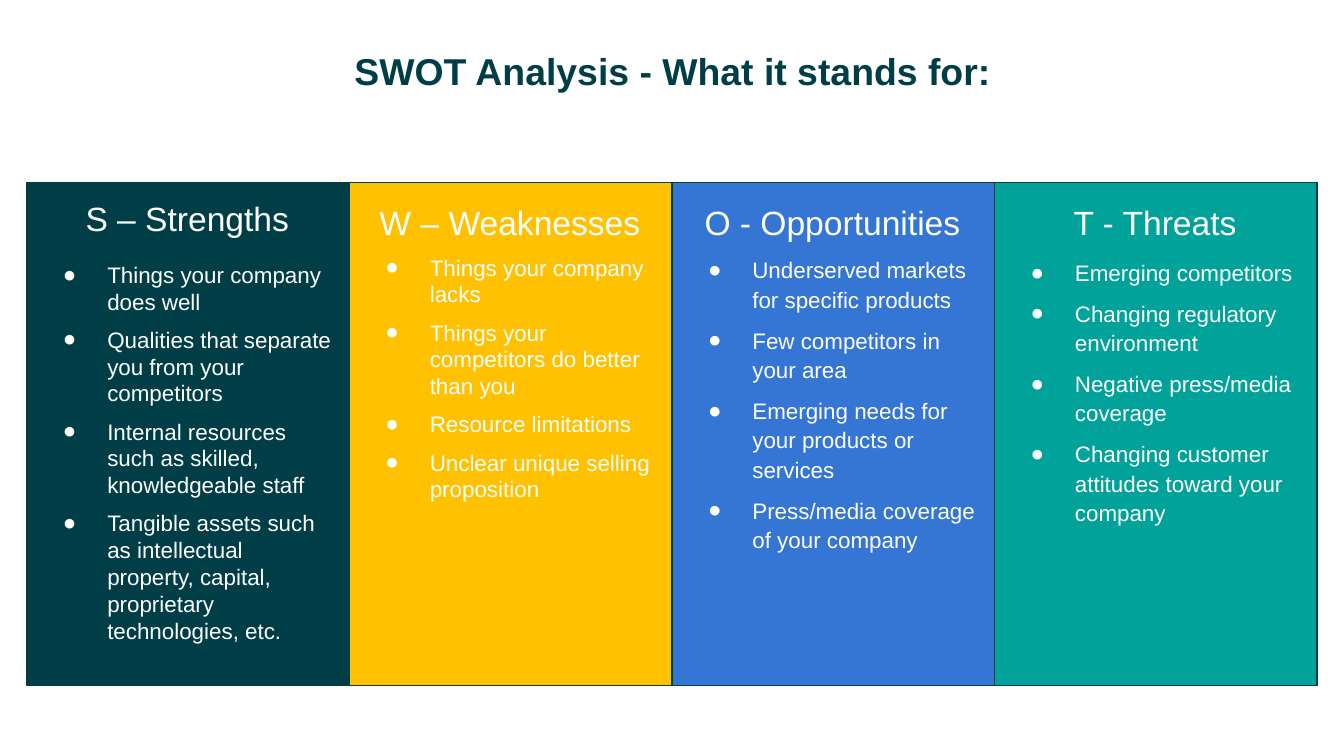
from lxml import etree
from pptx import Presentation
from pptx import util as u
from pptx.dml.color import RGBColor
from pptx.enum import shapes, text
from pptx.oxml import ns

Inches, Pt = u.Inches, u.Pt
DARK, WHITE = "003E47", "FFFFFF"


def color(value):
    return RGBColor.from_string(value)


class Deck:
    font = "Arial"

    def __init__(self, prs):
        self.s = prs.slides.add_slide(prs.slide_layouts[6])

    def run(self, p, words, size, fill, bold=False):
        r = p.add_run()
        r.text = words
        r.font.name, r.font.size, r.font.bold = self.font, Pt(size), bold
        r.font.color.rgb = color(fill)

    def title(self, words, x, y, w, h):
        tf = self.s.shapes.add_textbox(
            Inches(x), Inches(y), Inches(w), Inches(h)).text_frame
        tf.word_wrap = True
        p = tf.paragraphs[0]
        p.alignment = text.PP_ALIGN.CENTER
        self.run(p, words, 20, DARK, bold=True)

    def panel(self, x, y, w, h, fill):
        sp = self.s.shapes.add_shape(
            shapes.MSO_SHAPE.RECTANGLE, Inches(x), Inches(y), Inches(w), Inches(h))
        sp.shadow.inherit = False
        sp.fill.solid()
        sp.fill.fore_color.rgb = color(fill)
        sp.line.color.rgb = color(DARK)
        sp.line.width = Pt(0.75)
        tf = sp.text_frame
        tf.word_wrap = True
        tf.vertical_anchor = text.MSO_ANCHOR.TOP
        tf.margin_left = tf.margin_top = tf.margin_bottom = Inches(0.1)
        tf.margin_right = Inches(0.11)
        return tf

    def heading(self, tf, words, spacing):
        p = tf.paragraphs[0]
        p.alignment = text.PP_ALIGN.CENTER
        p.line_spacing = spacing
        self.run(p, words, 18, WHITE)

    def bullet(self, tf, words, spacing, before):
        p = tf.add_paragraph()
        p.alignment = text.PP_ALIGN.LEFT
        p.line_spacing = spacing
        p.space_before = Pt(before)
        pPr = p._p.get_or_add_pPr()
        pPr.set("marL", str(Inches(0.5)))
        pPr.set("indent", str(Inches(-0.33)))
        clr = etree.SubElement(pPr, ns.qn("a:buClr"))
        etree.SubElement(clr, ns.qn("a:srgbClr"), val=WHITE)
        etree.SubElement(pPr, ns.qn("a:buFont"), typeface=self.font)
        etree.SubElement(pPr, ns.qn("a:buChar"), char="●")
        self.run(p, words, 12, WHITE)


# Heading, fill, heading spacing, first gap, first and later bullet spacing, bullets
COLUMNS = [
    ("S – Strengths", DARK, 1.05, 12, 1.0, 1.0, [
        "Things your company does well",
        "Qualities that separate you from your competitors",
        "Internal resources such as skilled, knowledgeable staff",
        "Tangible assets such as intellectual property, capital, "
        "proprietary technologies, etc."]),
    ("W – Weaknesses", "FFC100", 1.15, 6, 1.0, 1.0, [
        "Things your company lacks",
        "Things your competitors do better than you",
        "Resource limitations",
        "Unclear unique selling proposition"]),
    ("O - Opportunities", "3575D3", 1.15, 6, 1.1, 1.1, [
        "Underserved markets for specific products",
        "Few competitors in your area",
        "Emerging needs for your products or services",
        "Press/media coverage of your company"]),
    ("T - Threats", "00A29A", 1.15, 6, 1.2, 1.1, [
        "Emerging competitors",
        "Changing regulatory environment",
        "Negative press/media coverage",
        "Changing customer attitudes toward your company"]),
]
LEFT, TOP, WIDTH, HEIGHT = 0.2, 1.36, 2.4, 3.74

# Widescreen 16:9 page
prs = Presentation()
prs.slide_width = Inches(10)
prs.slide_height = Inches(10) * 9 // 16
deck = Deck(prs)

# Four adjoining columns
for i, (name, fill, head, gap, first, later, bullets) in enumerate(COLUMNS):
    tf = deck.panel(LEFT + i * WIDTH, TOP, WIDTH, HEIGHT, fill)
    deck.heading(tf, name, head)
    for j, words in enumerate(bullets):
        deck.bullet(tf, words, later if j else first, 6 if j else gap)

# Title
deck.title("SWOT Analysis - What it stands for:", 2.43, 0.31, 5.15, 0.44)

prs.save("out.pptx")
